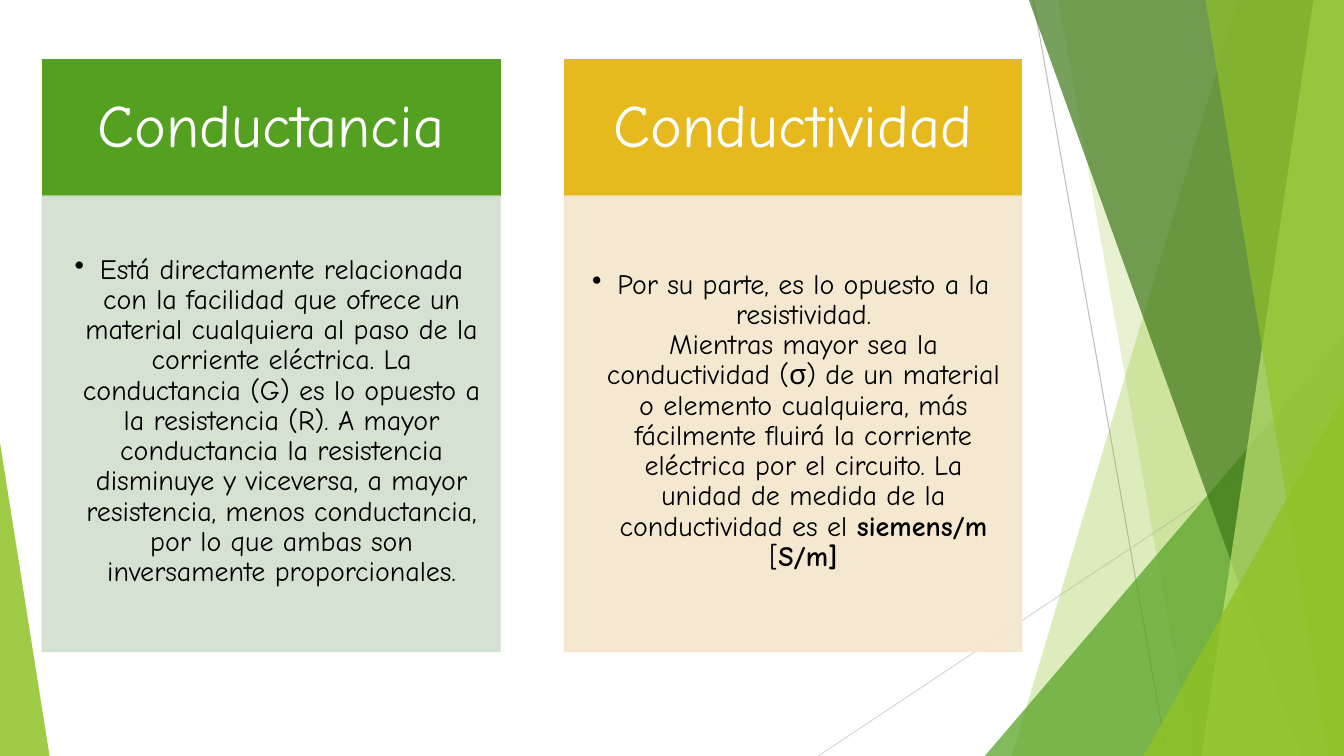
from collections import namedtuple
from dataclasses import dataclass

from lxml import etree
from pptx import Presentation
from pptx.dml.color import RGBColor
from pptx.enum.shapes import MSO_CONNECTOR as Connector, MSO_SHAPE as Shape
from pptx.enum.text import MSO_ANCHOR as Anchor, PP_ALIGN as Align
from pptx.oxml.ns import qn
from pptx.util import Cm, Pt


@dataclass(frozen=True)
class Theme:
    font: str = "Comic Neue"
    title_size: float = 43
    body_size: float = 20
    line_spacing: float = 0.9
    card_line: float = 1
    thin_line: float = 0.75
    white: str = "FFFFFF"
    black: str = "000000"
    grey: str = "BFBFBF"
    pale_grey: str = "D9D9D9"
    lime: str = "90C226"
    pale_lime: str = "C0E474"
    green: str = "54A021"
    dark_green: str = "3F7819"
    pale_green: str = "D1DFCD"
    gold: str = "E6B91E"
    pale_gold: str = "F5E6CD"


THEME = Theme()
Box = namedtuple("Box", "left top width height")
Card = namedtuple("Card", "title runs color tint")
SLIDE_BOX = Box(0, 0, 33.87, 19.05)
CARDS_BOX = Box(1.07, 1.5, 24.68, 14.92)

CARDS = [
    Card(
        "Conductancia",
        [("Está directamente relacionada con la facilidad que ofrece un material "
          "cualquiera al paso de la corriente eléctrica. La conductancia (G) es lo "
          "opuesto a la resistencia (R). A mayor conductancia la resistencia "
          "disminuye y viceversa, a mayor resistencia, menos conductancia, por lo "
          "que ambas son inversamente proporcionales.", False)],
        THEME.green, THEME.pale_green),
    Card(
        "Conductividad",
        [("Por su parte, es lo opuesto a la resistividad.", False),
         None,
         ("Mientras mayor sea la conductividad (σ) de un material o elemento "
          "cualquiera, más fácilmente fluirá la corriente eléctrica por el circuito. "
          "La unidad de medida de la conductividad es el ", False),
         ("siemens/m", True), (" [", False), ("S/m]", True)],
        THEME.gold, THEME.pale_gold),
]


def paint(fill, color, opacity=100):
    fill.solid()
    fill.fore_color.rgb = RGBColor.from_string(color)
    if opacity < 100:
        color_element = fill._xPr.find(qn("a:solidFill"))[0]
        etree.SubElement(color_element, qn("a:alpha"), val=str(opacity * 1000))


def add_line(slide, start, end, color):
    line = slide.shapes.add_connector(
        Connector.STRAIGHT, *(Cm(value) for value in (*start, *end)))
    line.line.width = Pt(THEME.thin_line)
    line.line.color.rgb = RGBColor.from_string(color)
    etree.SubElement(line._element.spPr, qn("a:effectLst"))


def finish_facet(shape, color, opacity):
    paint(shape.fill, color, opacity)
    shape.line.fill.background()
    shape.shadow.inherit = False


def add_band(slide, box, top_x, bottom_x, color, opacity):
    right, bottom = box.left + box.width, box.top + box.height
    builder = slide.shapes.build_freeform(Cm(top_x), Cm(box.top))
    corners = [(right, box.top), (right, bottom), (bottom_x, bottom)]
    builder.add_line_segments([(Cm(x), Cm(y)) for x, y in corners], close=True)
    finish_facet(builder.convert_to_shape(), color, opacity)


def add_corner(slide, box, width, height, apex, color, opacity):
    left = box.left + apex * (box.width - width)
    top = box.top + box.height - height
    shape = slide.shapes.add_shape(
        Shape.ISOSCELES_TRIANGLE, Cm(left), Cm(top), Cm(width), Cm(height))
    shape.adjustments[0] = apex
    finish_facet(shape, color, opacity)


def draw_facets(slide, box):
    right, bottom = box.left + box.width, box.top + box.height
    add_line(slide, (box.left + 26.04, box.top), (box.left + 29.41, bottom), THEME.grey)
    add_line(slide, (right, box.top + 10.24), (box.left + 20.62, bottom), THEME.pale_grey)
    add_band(slide, box, 31.19, 25.5, THEME.lime, 30)
    add_band(slide, box, 26.67, 30.05, THEME.lime, 20)
    add_corner(slide, box, 9.05, 10.59, 1, THEME.green, 72)
    add_band(slide, box, 25.93, 32.79, THEME.dark_green, 70)
    add_band(slide, box, 33.1, 30.28, THEME.pale_lime, 70)
    add_band(slide, box, 30.38, 33.48, THEME.lime, 65)
    add_corner(slide, box, 5.05, 9.07, 1, THEME.lime, 80)
    add_corner(slide, box, 1.25, 7.9, 0, THEME.lime, 85)


def add_panel(slide, box, color, opacity, insets):
    shape = slide.shapes.add_shape(Shape.RECTANGLE, *(Cm(value) for value in box))
    shape.shadow.inherit = False
    paint(shape.fill, color, opacity)
    shape.line.width = Pt(THEME.card_line)
    paint(shape.line.fill, color, opacity)
    frame = shape.text_frame
    frame.word_wrap = True
    frame.vertical_anchor = Anchor.MIDDLE
    (frame.margin_left, frame.margin_top,
     frame.margin_right, frame.margin_bottom) = (Cm(value) for value in insets)
    paragraph = frame.paragraphs[0]
    paragraph.alignment = Align.CENTER
    paragraph.line_spacing = THEME.line_spacing
    return paragraph


def add_run(paragraph, text, size, color, bold=False):
    run = paragraph.add_run()
    run.text = text
    run.font.name = THEME.font
    run.font.size = Pt(size)
    run.font.bold = bold
    run.font.color.rgb = RGBColor.from_string(color)


def add_bullet(paragraph):
    properties = paragraph._p.get_or_add_pPr()
    properties.set("marL", str(Cm(0.64)))
    properties.set("indent", str(-Cm(0.64)))
    etree.SubElement(properties, qn("a:buChar"), char="•")


def draw_card(slide, box, card):
    head_height = 3.44
    head = Box(box.left, box.top, box.width, head_height)
    body = Box(box.left, box.top + head_height, box.width, box.height - head_height)
    title = add_panel(slide, head, card.color, 100, (0.84, 0.48, 0.84, 0.48))
    add_run(title, card.title, THEME.title_size, THEME.white)
    text = add_panel(slide, body, card.tint, 90, (0.3, 0.3, 0.41, 0.43))
    add_bullet(text)
    for part in card.runs:
        if part is None:
            text.add_line_break()
        else:
            words, bold = part
            add_run(text, words, THEME.body_size, THEME.black, bold)


def draw_cards(slide, box, cards, gap=1.62):
    width = (box.width - gap * (len(cards) - 1)) / len(cards)
    for index, card in enumerate(cards):
        left = box.left + index * (width + gap)
        draw_card(slide, Box(left, box.top, width, box.height), card)


def main():
    presentation = Presentation()
    presentation.slide_width = Cm(SLIDE_BOX.width)
    presentation.slide_height = Cm(SLIDE_BOX.height)
    slide = presentation.slides.add_slide(presentation.slide_layouts[6])
    paint(slide.background.fill, THEME.white)
    draw_facets(slide, SLIDE_BOX)
    draw_cards(slide, CARDS_BOX, CARDS)
    presentation.save("out.pptx")


if __name__ == "__main__":
    main()
